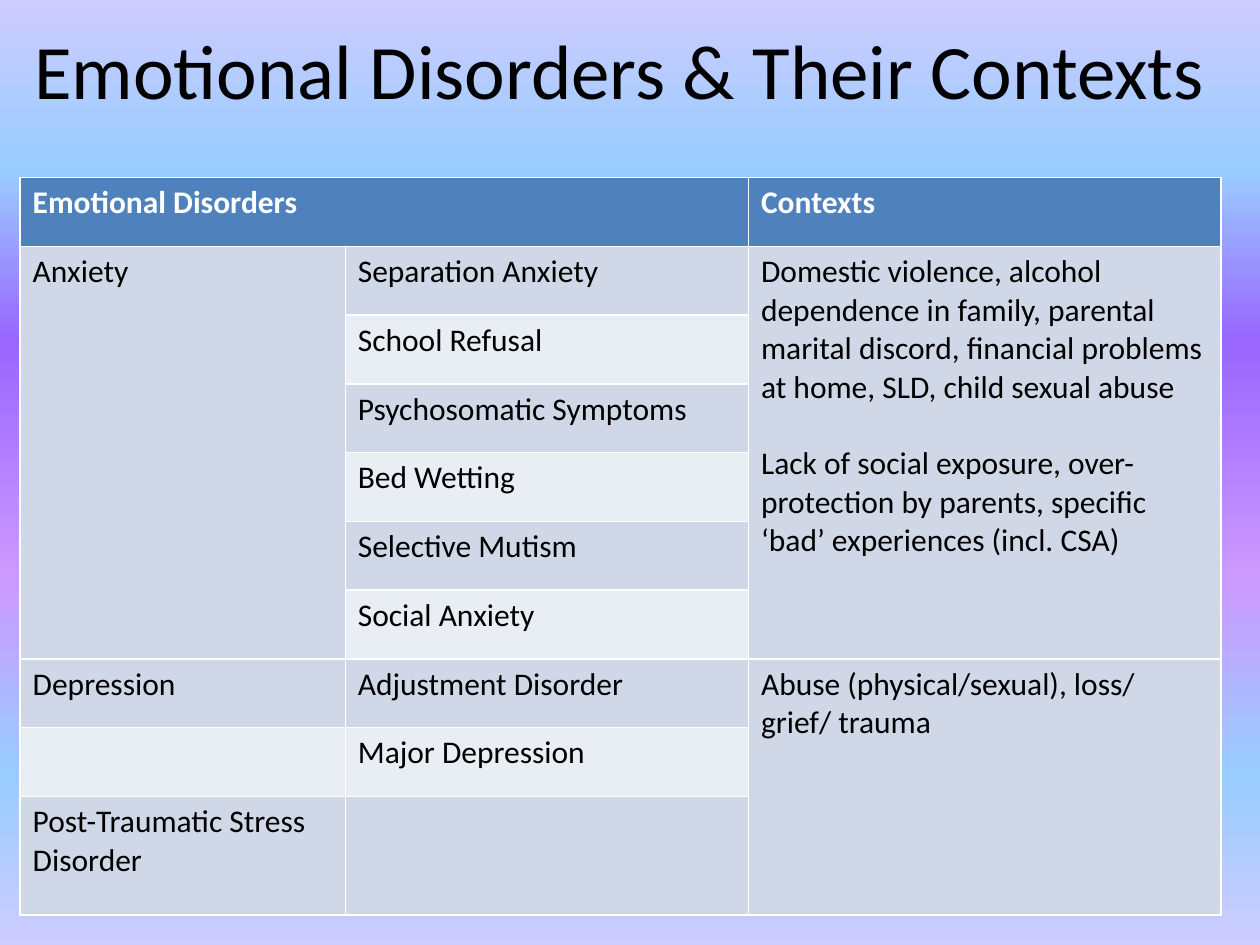
from copy import deepcopy
from pptx import Presentation
from pptx.dml.color import RGBColor
from pptx.enum.text import MSO_ANCHOR, PP_ALIGN
from pptx.oxml.ns import qn
from pptx.util import Pt

MIDDLE, CENTER = MSO_ANCHOR.MIDDLE, PP_ALIGN.CENTER
COLORS = {"head": "4F81BD", "dark": "D0D8E8", "light": "E9EDF4",
          "white": "FFFFFF", "black": "000000"}
STOPS = [(0, "CCCCFF"), (18, "99CCFF"), (36, "9966FF"),
         (61, "CC99FF"), (82, "99CCFF"), (100, "CCCCFF")]
ROWS = [
    ("Emotional Disorders", "", "Contexts"),
    ("Anxiety", "Separation Anxiety",
     "Domestic violence, alcohol dependence in family, parental marital "
     "discord, financial problems at home, SLD, child sexual abuse\n"
     "Lack of social exposure, over-protection by parents, specific "
     "‘bad’ experiences (incl. CSA)"),
    ("", "School Refusal", ""),
    ("", "Psychosomatic Symptoms", ""),
    ("", "Bed Wetting", ""),
    ("", "Selective Mutism", ""),
    ("", "Social Anxiety", ""),
    ("Depression", "Adjustment Disorder",
     "Abuse (physical/sexual), loss/ grief/ trauma"),
    ("", "Major Depression", ""),
    ("Post-Traumatic Stress Disorder", "", ""),
]
WIDTHS = [185.8, 230.4, 270]
HEIGHTS = [39.3] * 9 + [67.7]
# First and last cell of each merged block, as (row, column)
SPANS = [((0, 0), (0, 1)), ((1, 0), (6, 0)), ((1, 2), (6, 2)), ((7, 2), (9, 2))]


def style(par, size, color, bold=False):
    for run in par.runs:
        run.font.name = "Calibri"
        run.font.size = Pt(size)
        run.font.bold = bold
        run.font.color.rgb = RGBColor.from_string(COLORS[color])


prs = Presentation()
prs.slide_width, prs.slide_height = Pt(720), Pt(540)
slide = prs.slides.add_slide(prs.slide_layouts[5])

# Background: top to bottom, with six stops
fill = slide.background.fill
fill.gradient()
fill.gradient_angle = 270
stops = slide.element.find(".//" + qn("a:gsLst"))
for _ in STOPS[2:]:
    stops.append(deepcopy(stops[0]))
for stop, (pos, color) in zip(fill.gradient_stops, STOPS):
    stop.position = pos / 100
    stop.color.rgb = RGBColor.from_string(color)

# Title
title = slide.shapes.title
title.left, title.top, title.width, title.height = Pt(0), Pt(0), Pt(708.5), Pt(78.5)
frame = title.text_frame
frame.text = "Emotional Disorders & Their Contexts"
frame.vertical_anchor = MIDDLE
frame.paragraphs[0].alignment = CENTER
style(frame.paragraphs[0], 44, "black")

# Table
table = slide.shapes.add_table(len(ROWS), len(WIDTHS), Pt(11.5), Pt(101.5),
                               Pt(sum(WIDTHS)), Pt(sum(HEIGHTS))).table
for col, width in zip(table.columns, WIDTHS):
    col.width = Pt(width)
for row, height in zip(table.rows, HEIGHTS):
    row.height = Pt(height)
for first, last in SPANS:
    table.cell(*first).merge(table.cell(*last))

for r, row in enumerate(ROWS):
    head = r == 0
    band = "head" if head else "dark" if r % 2 else "light"
    for c, text in enumerate(row):
        cell = table.cell(r, c)
        cell.fill.solid()
        cell.fill.fore_color.rgb = RGBColor.from_string(COLORS[band])
        cell.text_frame.text = text
        for n, par in enumerate(cell.text_frame.paragraphs):
            par.space_before = Pt(22 * n)
            style(par, 18, "white" if head else "black", head)

prs.save("out.pptx")
